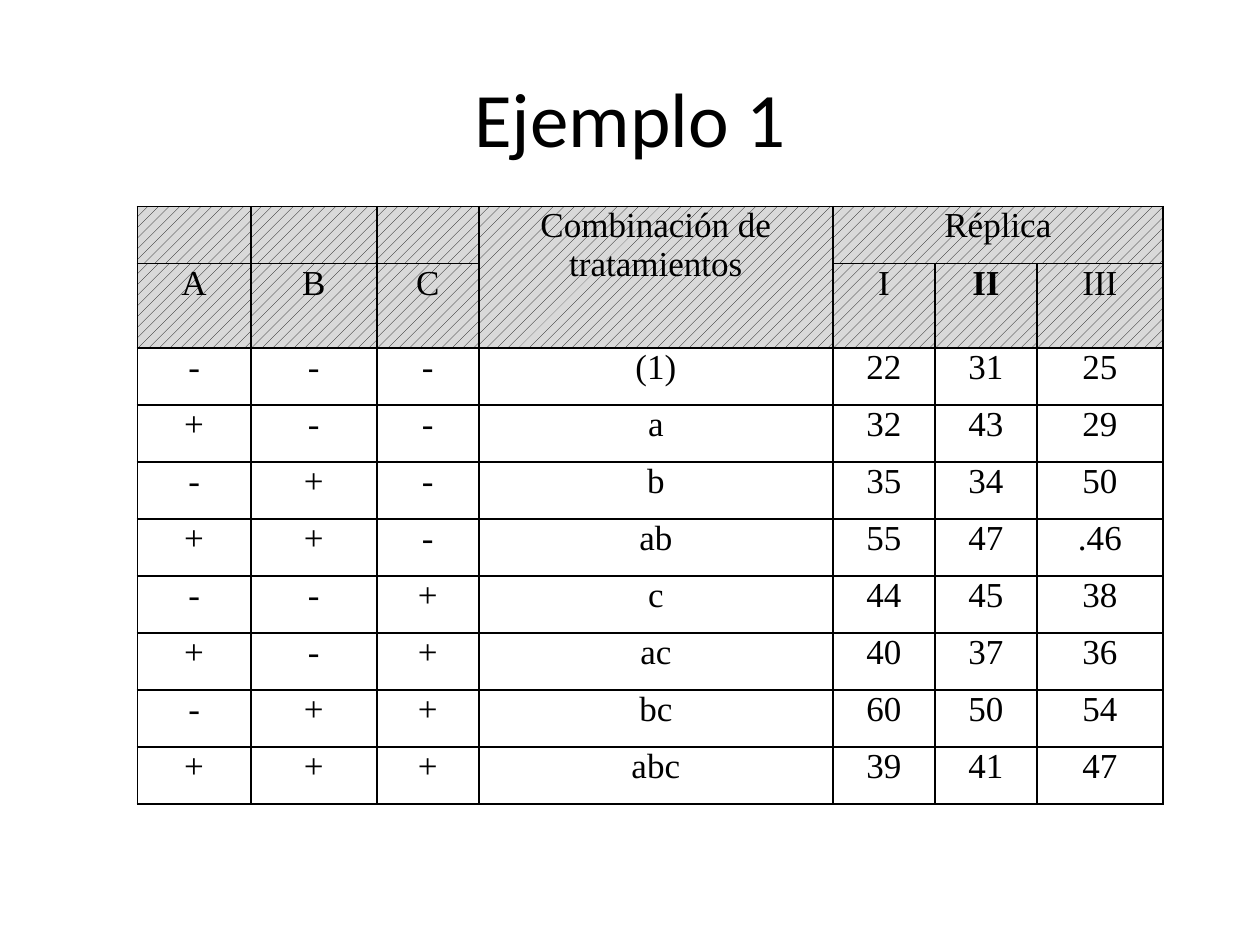
"""Build a slide with the table of a 2x2x2 factorial experiment."""
from lxml import etree
from pptx import Presentation
from pptx.dml.color import RGBColor
from pptx.enum import dml, text
from pptx.oxml import ns
from pptx.util import Inches, Pt

TITLE = "Ejemplo 1"
HEADER = [
    ("", "", "", "Combinación de tratamientos", "Réplica", "", ""),
    ("A", "B", "C", "", "I", "II", "III"),
]
RUNS = [
    ("-", "-", "-", "(1)", "22", "31", "25"),
    ("+", "-", "-", "a", "32", "43", "29"),
    ("-", "+", "-", "b", "35", "34", "50"),
    ("+", "+", "-", "ab", "55", "47", ".46"),
    ("-", "-", "+", "c", "44", "45", "38"),
    ("+", "-", "+", "ac", "40", "37", "36"),
    ("-", "+", "+", "bc", "60", "50", "54"),
    ("+", "+", "+", "abc", "39", "41", "47"),
]
COLUMN_WIDTHS = [0.9, 1, 0.81, 2.81, 0.81, 0.81, 1]
TABLE_HEIGHT = 4.53
MERGES = [((0, 3), (1, 3)), ((0, 4), (0, 6))]
BOLD_LABEL = "II"
BLACK = RGBColor(0x00, 0x00, 0x00)
GREY = RGBColor(0xD9, 0xD9, 0xD9)


def write(frame, words, font_name, size, bold=False):
    frame.text = words
    para = frame.paragraphs[0]
    para.alignment = text.PP_ALIGN.CENTER
    for span in para.runs:
        span.font.name = font_name
        span.font.size = Pt(size)
        span.font.bold = bold
        span.font.color.rgb = BLACK


def add_borders(cell):
    properties = cell._tc.get_or_add_tcPr()
    for side in ("lnL", "lnR", "lnT", "lnB"):
        line = etree.SubElement(properties, ns.qn(f"a:{side}"), w=str(Pt(1)))
        fill = etree.SubElement(line, ns.qn("a:solidFill"))
        etree.SubElement(fill, ns.qn("a:srgbClr"), val=str(BLACK))


def fill_cell(cell, is_header):
    if is_header:
        cell.fill.patterned()
        cell.fill.pattern = dml.MSO_PATTERN.PERCENT_20
        cell.fill.fore_color.rgb = BLACK
        cell.fill.back_color.rgb = GREY
    else:
        cell.fill.background()


def add_title(page):
    box = page.shapes.add_textbox(Inches(0.5), Inches(0.3), Inches(9), Inches(1.25))
    box.text_frame.word_wrap = True
    box.text_frame.vertical_anchor = text.MSO_ANCHOR.MIDDLE
    write(box.text_frame, TITLE, "Calibri", 44)


def add_design_table(page):
    rows = HEADER + RUNS
    table = page.shapes.add_table(
        len(rows), len(COLUMN_WIDTHS), Inches(1.09), Inches(1.64),
        Inches(sum(COLUMN_WIDTHS)), Inches(TABLE_HEIGHT)).table
    table.first_row = table.horz_banding = False
    for column, width in zip(table.columns, COLUMN_WIDTHS):
        column.width = Inches(width)
    for r, row in enumerate(rows):
        table.rows[r].height = Inches(TABLE_HEIGHT / len(rows))
        for c, words in enumerate(row):
            cell = table.cell(r, c)
            add_borders(cell)
            fill_cell(cell, r < len(HEADER))
            if words:
                cell.margin_left = cell.margin_right = Inches(0.05)
                cell.margin_top = cell.margin_bottom = 0
                write(cell.text_frame, words, "Times New Roman", 20, words == BOLD_LABEL)
    for first, last in MERGES:
        table.cell(*first).merge(table.cell(*last))


def main():
    deck = Presentation()
    deck.slide_width, deck.slide_height = Inches(10), Inches(7.5)
    page = deck.slides.add_slide(deck.slide_layouts[6])
    add_title(page)
    add_design_table(page)
    deck.save("out.pptx")


if __name__ == "__main__":
    main()
